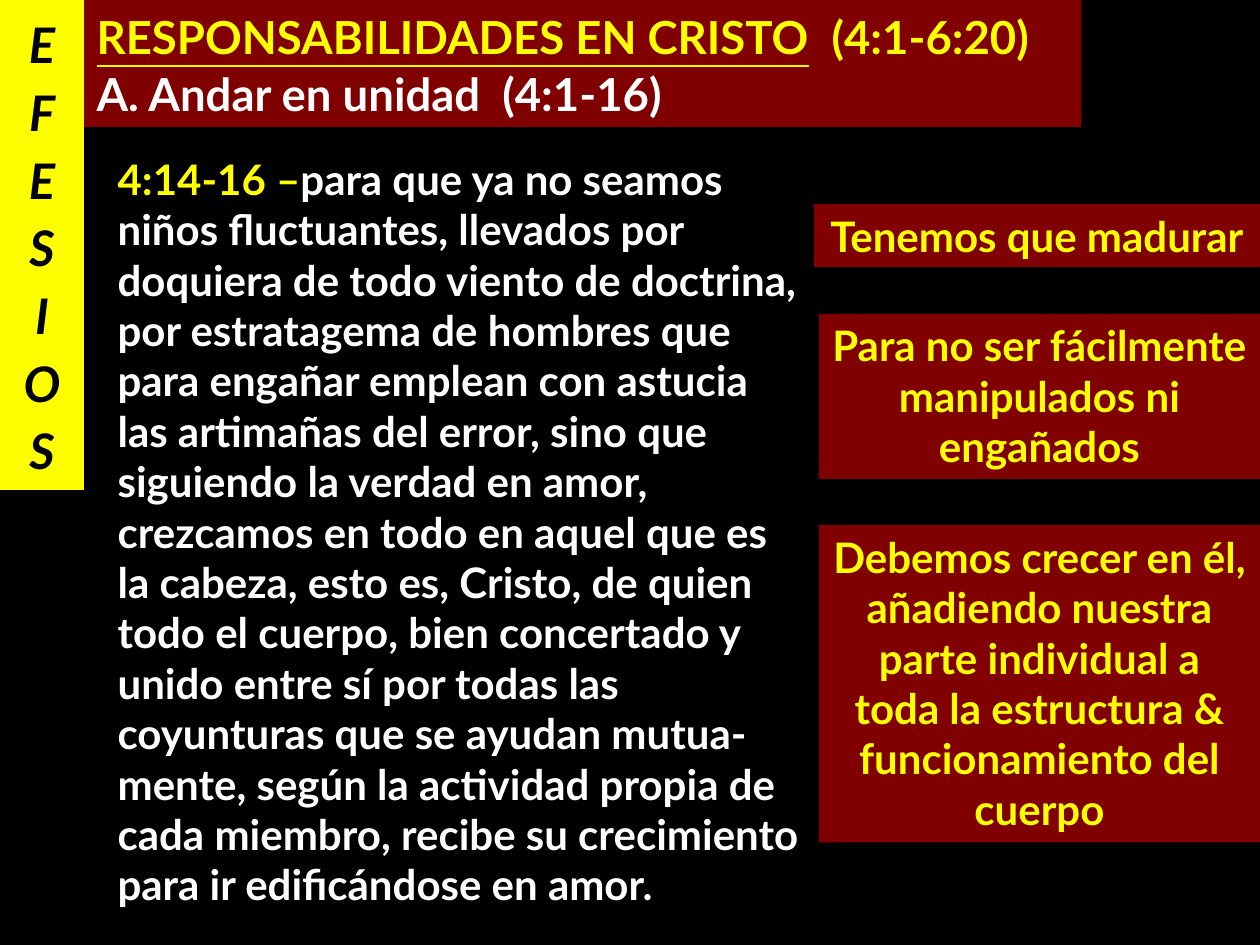
from pptx import Presentation, util as u
from pptx.dml import color
from pptx.enum import shapes, text

BLACK, WHITE, YELLOW, MAROON = "000000", "FFFFFF", "FFFF00", "800000"
COLUMNS, ROWS = 60, 45


def rgb(value):
    return color.RGBColor.from_string(value)


def write(paragraph, wording, size=24, ink=YELLOW, italic=False, underline=False):
    run = paragraph.add_run()
    run.text = wording
    font = run.font
    font.name, font.size, font.bold = "Lato", u.Pt(size), True
    font.italic, font.underline = italic, underline
    font.color.rgb = rgb(ink)


class Lesson:
    """Black lesson slide laid out on a grid of 60 columns by 45 rows."""

    def __init__(self, deck):
        deck.slide_width, deck.slide_height = u.Inches(10), u.Inches(7.5)
        self.column = deck.slide_width / COLUMNS
        self.row = deck.slide_height / ROWS
        self.slide = deck.slides.add_slide(deck.slide_layouts[1])
        self.slide.background.fill.solid()
        self.slide.background.fill.fore_color.rgb = rgb(BLACK)

    def cells(self, left, top, width, height):
        return (int(left * self.column), int(top * self.row),
                int(width * self.column), int(height * self.row))

    def place(self, holder, area):
        holder.left, holder.top, holder.width, holder.height = self.cells(*area)

    def paint(self, shape, fill):
        shape.fill.solid()
        shape.fill.fore_color.rgb = rgb(fill)

    def fill_text(self, shape, lines, align, spacing=1.0, anchor="TOP", hanging=0):
        frame = shape.text_frame
        frame.word_wrap = True
        frame.auto_size = text.MSO_AUTO_SIZE.SHAPE_TO_FIT_TEXT
        frame.vertical_anchor = text.MSO_ANCHOR[anchor]
        for index, runs in enumerate(lines):
            paragraph = frame.add_paragraph() if index else frame.paragraphs[0]
            paragraph.alignment = text.PP_ALIGN[align]
            paragraph.line_spacing = spacing
            paragraph.space_before = u.Pt(0)
            properties = paragraph._p.get_or_add_pPr()
            properties.set("marL", str(u.Inches(hanging)))
            properties.set("indent", str(-u.Inches(hanging)))
            properties.get_or_add_buNone() if hasattr(properties, "get_or_add_buNone") else \
                properties.append(properties.makeelement(
                    "{http://schemas.openxmlformats.org/drawingml/2006/main}buNone", {}))
            for wording, style in runs:
                write(paragraph, wording, **style)

    def heading(self, area, lines):
        title = self.slide.shapes.title
        self.place(title, area)
        self.paint(title, MAROON)
        self.fill_text(title, lines, "LEFT", 1.05, "MIDDLE", 0.5)

    def passage(self, area, runs):
        body = self.slide.placeholders[1]
        self.place(body, area)
        self.fill_text(body, [runs], "LEFT")

    def panel(self, area, lines, fill=MAROON, spacing=1.0):
        box = self.slide.shapes.add_shape(shapes.MSO_SHAPE.RECTANGLE, *self.cells(*area))
        box.shadow.inherit = False
        box.line.fill.background()
        self.paint(box, fill)
        self.fill_text(box, lines, "CENTER", spacing)


def main():
    deck = Presentation()
    lesson = Lesson(deck)
    lesson.heading((4, 0, 47.5, 6.06), [
        [("RESPONSABILIDADES EN CRISTO", {"size": 26, "underline": True}),
         ("  (4:1-6:20)", {"size": 26})],
        [("A. Andar en unidad  (4:1-16)", {"size": 26, "ink": WHITE})],
    ])
    lesson.passage((5, 7, 34, 34.56), [
        ("4:14-16 –", {}),
        ("para que ya no seamos niños fluctuantes, llevados por doquiera de todo "
         "viento de doctrina, por estratagema de hombres que para engañar emplean "
         "con astucia las artimañas del error, sino que siguiendo la verdad en amor, "
         "crezcamos en todo en aquel que es la cabeza, esto es, Cristo, de quien todo "
         "el cuerpo, bien concertado y unido entre sí por todas las coyunturas que se "
         "ayudan mutua-mente, según la actividad propia de cada miembro, recibe su "
         "crecimiento para ir edificándose en amor.", {"ink": WHITE}),
    ])
    book = {"size": 28, "ink": BLACK, "italic": True}
    lesson.panel((0, 0, 4, 23.33), [[(letter, book)] for letter in "EFESIOS"], YELLOW, 1.15)
    teachings = [
        ((38.76, 9.72, 21.24, 3), "Tenemos que madurar"),
        ((39, 14.94, 21, 7.86), "Para no ser fácilmente manipulados ni engañados"),
        ((39, 25, 21, 15.12), "Debemos crecer en él, añadiendo nuestra parte individual "
                              "a toda la estructura & funcionamiento del cuerpo"),
    ]
    for area, teaching in teachings:
        lesson.panel(area, [[(teaching, {})]])
    deck.save("out.pptx")


if __name__ == "__main__":
    main()
